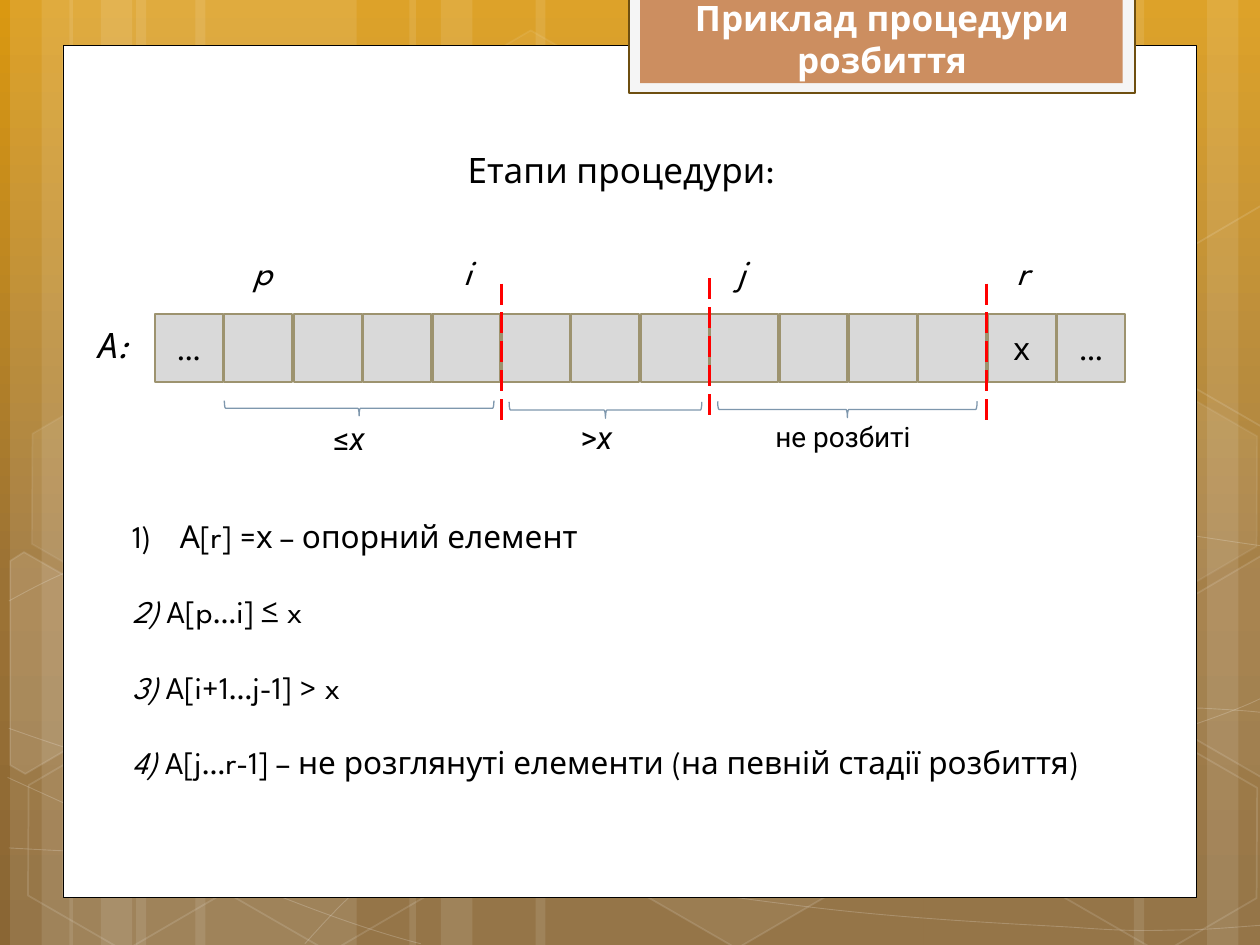
"""Build the slide that shows the stages of the array partition procedure."""
import math
from dataclasses import dataclass
from typing import Optional

from lxml import etree
from pptx import Presentation
from pptx import util as u
from pptx.dml.color import RGBColor
from pptx.enum import dml, shapes, text
from pptx.oxml import ns

WHITE = RGBColor(0xFF, 0xFF, 0xFF)
BLACK = RGBColor(0, 0, 0)
RED = RGBColor(0xFF, 0, 0)
CELL_FILL = RGBColor(0xD9, 0xD9, 0xD9)
CELL_LINE = RGBColor(0x9D, 0x93, 0x6F)
BRACE = RGBColor(0x7E, 0x97, 0xAD)
TAB_FILL = RGBColor(0xF5, 0xF5, 0xF5)
TAB_LINE = RGBColor(0x6E, 0x4F, 0x10)
TITLE_FILL = RGBColor(0xCC, 0x8E, 0x60)
GRADIENT = ((0, "DA9811"), (62, "9B7235"), (100, "8A6634"))
HEAD_FONT, NOTE_FONT = "League Spartan", "Roboto"
SHAPE, ALIGN = shapes.MSO_SHAPE, text.PP_ALIGN
TILT = 30


@dataclass
class Paint:
    color: RGBColor
    alpha: int = 100
    width: float = 0.5


@dataclass
class Run:
    text: str
    italic: bool = False


@dataclass
class Label:
    box: tuple
    paragraphs: list
    size: int = 20
    font: str = HEAD_FONT
    color: RGBColor = BLACK
    align: Optional[text.PP_ALIGN] = None
    bold: bool = False
    wrap: bool = True
    gap: float = 0


@dataclass
class Hexagon:
    x: float
    y: float
    fill: int
    line: int


@dataclass
class CutHexagon:
    center: tuple
    points: list
    fill: int


BANDS = [(1.08, 1.75), (0.08, 0.5), (0.33, 0.83), (1.55, 1.75), (0.55, 0.5), (0.8, 0.83),
         (7.33, 1.75), (9.58, 0.5), (9, 0.83), (4.25, 3.08), (3.25, 0.5), (3.5, 0.83)]
CURVES = [
    [(0.07, 6.73), (0.61, 6.76), (1.15, 6.79), (1.9, 6.78), (2.65, 6.77), (3.58, 6.75), (4.58, 6.65),
     (5.58, 6.55), (7, 6.36), (7.92, 6.17), (8.83, 5.98), (9.77, 5.68), (10.07, 5.51)],
    [(0.07, 4.77), (0.36, 4.61), (0.65, 4.46), (1.21, 4.31), (1.78, 4.16), (2.59, 3.94), (3.47, 3.87),
     (4.36, 3.8), (5.44, 3.79), (6.54, 3.87), (7.64, 3.95), (9.47, 4.26), (10.07, 4.34)],
    [(0.06, 6.17), (1.27, 6.72), (2.47, 7.27), (3.34, 7.49)],
    [(0.07, 5.78), (0.38, 5.89), (0.7, 6), (1.28, 6.16), (1.86, 6.31), (2.73, 6.56), (3.57, 6.73),
     (4.4, 6.9), (5.45, 7.08), (6.28, 7.18), (7.11, 7.29), (8, 7.33), (8.53, 7.36),
     (9.05, 7.4), (9.19, 7.38), (9.45, 7.38), (9.71, 7.37), (9.89, 7.35), (10.07, 7.34)],
    [(2.42, 7.49), (2.6, 7.29), (2.78, 7.09), (3.02, 6.91), (3.26, 6.73), (3.6, 6.53), (3.88, 6.39),
     (4.16, 6.25), (4.33, 6.19), (4.7, 6.09), (5.06, 5.99), (5.73, 5.85), (6.08, 5.78),
     (6.44, 5.71), (6.49, 5.71), (6.8, 5.69), (7.11, 5.66), (7.6, 5.63), (7.94, 5.62),
     (8.29, 5.61), (8.86, 5.62), (8.86, 5.62), (9.08, 5.62), (9.31, 5.62), (9.53, 5.62),
     (9.71, 5.63), (9.88, 5.64), (9.97, 5.65), (10.06, 5.66), (10.03, 5.65), (10.06, 5.66)],
]
HEXAGONS = [Hexagon(3.34, 0.36, 4, 8), Hexagon(4.97, 5.89, 6, 12), Hexagon(0.11, 5.91, 0, 12),
            Hexagon(0.14, 3.12, 7, 8), Hexagon(1.74, 5.92, 0, 12), Hexagon(7.53, 4.53, 10, 12),
            Hexagon(8.34, 5.93, 0, 12), Hexagon(8.34, 3.14, 7, 8)]
CUT_HEXAGONS = [
    CutHexagon((0.36, 5.35), [(0.08, 4.45), (0.19, 4.38), (0.96, 4.82), (0.95, 5.7),
                              (0.2, 6.14), (0.08, 6.07)], 10),
    CutHexagon((9.85, 5.2), [(9.26, 4.85), (10.01, 4.41), (10.09, 4.46), (10.09, 6.13),
                             (10.02, 6.17), (9.26, 5.73)], 4),
    CutHexagon((9.85, 2.41), [(9.26, 2.07), (10.01, 1.63), (10.1, 1.68), (10.09, 3.35),
                              (10.02, 3.39), (9.26, 2.95)], 0),
]
CELLS = ["…"] + [""] * 11 + ["х", "…"]
PITCH = 7.16 / 13
MARKERS = [(7.83, 2.25), (5.63, 2.21), (3.98, 2.25)]
BRACES = [(2.79, 2.17, 0.12, 2.14), (4.74, 2.49, 0.13, 1.53), (6.66, 2.22, 0.13, 2.06)]
INDEXES = [("p", 1.91), ("i", 3.58), ("j", 5.75), ("r", 7.97)]
STAGES = [
    [Run("А[r] =х – опорний елемент")],
    [Run("2) ", True), Run("A[p…i] ≤ x")],
    [Run("3) ", True), Run("A[i+1…j-1] > x")],
    [Run("4) ", True), Run("A[j…r-1] – не розглянуті елементи (на певній стадії розбиття)")],
]
LABELS = [
    Label((5.41, -0.08, 3.18, 0.77), [[Run("Приклад процедури ")], [Run("розбиття")]],
          color=WHITE, align=ALIGN.CENTER, bold=True, wrap=False),
    Label((3.4, 1.13, 3.06, 0.44), [[Run("Етапи процедури:")]], align=ALIGN.CENTER),
    Label((0.68, 2.52, 0.55, 0.44), [[Run("А:", True)]], align=ALIGN.JUSTIFY),
    *[Label((x, 1.94, 0.28, 0.44), [[Run(name, True)]], align=ALIGN.JUSTIFY) for name, x in INDEXES],
    Label((2.55, 3.28, 0.6, 0.4), [[Run("≤"), Run("х", True)]], 18, NOTE_FONT),
    Label((4.51, 3.27, 0.6, 0.4), [[Run(">"), Run("х", True)]], 18, NOTE_FONT),
    Label((6.02, 3.28, 1.34, 0.37), [[Run("не розбиті")]], 16, NOTE_FONT, align=ALIGN.CENTER),
]


def inches(values) -> list:
    return [u.Inches(v) for v in values]


def set_alpha(sp, query: str, alpha: int) -> None:
    if alpha < 100:
        for clr in sp._element.spPr.xpath(query):
            etree.SubElement(clr, ns.qn("a:alpha"), val=str(alpha * 1000))


def style(sp, fill: Optional[Paint] = None, line: Optional[Paint] = None):
    sp.shadow.inherit = False
    if fill and fill.alpha:
        sp.fill.solid()
        sp.fill.fore_color.rgb = fill.color
        set_alpha(sp, "./a:solidFill/a:srgbClr", fill.alpha)
    else:
        sp.fill.background()
    if line:
        sp.line.color.rgb = line.color
        sp.line.width = u.Pt(line.width)
        set_alpha(sp, "./a:ln/a:solidFill/a:srgbClr", line.alpha)
    else:
        sp.line.fill.background()
    return sp


def add_preset(s, kind, box, fill=None, line=None, rotation: float = 0):
    sp = s.shapes.add_shape(kind, *inches(box))
    sp.rotation = rotation
    return style(sp, fill, line)


def add_outline(s, points: list, close: bool, fill, line):
    pts = [inches(pt) for pt in points]
    builder = s.shapes.build_freeform(*pts[0], scale=1.0)
    builder.add_line_segments(pts[1:], close=close)
    return style(builder.convert_to_shape(), fill, line)


def add_curve(s, knots: list) -> None:
    sp = add_outline(s, knots, False, None, Paint(WHITE, 20))
    outline = sp._element.spPr.xpath(".//a:pathLst/*")[0]
    segments = outline.findall(ns.qn("a:lnTo"))
    for k in range(0, len(segments), 3):
        bezier = etree.SubElement(outline, ns.qn("a:cubicBezTo"))
        for segment in segments[k:k + 3]:
            bezier.append(segment[0])
            outline.remove(segment)


def add_cut_hexagon(s, h: CutHexagon) -> None:
    cx, cy = h.center
    cos, sin = math.cos(math.radians(TILT)), math.sin(math.radians(TILT))
    upright = [(cx + (x - cx) * cos + (y - cy) * sin, cy - (x - cx) * sin + (y - cy) * cos)
               for x, y in h.points]
    sp = add_outline(s, upright, True, Paint(WHITE, h.fill), Paint(WHITE, 12, 1))
    sp.rotation = TILT


def write(tf, label: Label) -> None:
    for n, runs in enumerate(label.paragraphs):
        p = tf.add_paragraph() if n else tf.paragraphs[0]
        p.alignment = label.align
        p.space_before = u.Pt(label.gap if n else 0)
        for run in runs:
            r = p.add_run()
            r.text = run.text
            r.font.size, r.font.name = u.Pt(label.size), label.font
            r.font.bold, r.font.italic = label.bold, run.italic
            r.font.color.rgb = label.color


def add_label(s, label: Label):
    tf = s.shapes.add_textbox(*inches(label.box)).text_frame
    tf.word_wrap = label.wrap
    tf.auto_size = text.MSO_AUTO_SIZE.SHAPE_TO_FIT_TEXT
    write(tf, label)
    return tf


def number(p) -> None:
    pPr = p._p.get_or_add_pPr()
    pPr.set("marL", str(u.Inches(0.38)))
    pPr.set("indent", str(-u.Inches(0.38)))
    etree.SubElement(pPr, ns.qn("a:buAutoNum"), type="arabicParenR")


def add_marker(s, x: float, y: float) -> None:
    line = s.shapes.add_connector(shapes.MSO_CONNECTOR.STRAIGHT, *inches((x, y, x, y + 1.11)))
    line.line.color.rgb = RED
    line.line.width = u.Pt(1.5)
    line.line.dash_style = dml.MSO_LINE.LONG_DASH
    etree.SubElement(line._element.spPr, ns.qn("a:effectLst"))


def add_backdrop(s) -> None:
    fill = s.background.fill
    fill.gradient()
    fill.gradient_angle = 270
    stops = s._element.xpath(".//p:bg//a:gsLst")[0]
    for gs in list(stops):
        stops.remove(gs)
    for pos, color in GRADIENT:
        gs = etree.SubElement(stops, ns.qn("a:gs"), pos=str(pos * 1000))
        etree.SubElement(gs, ns.qn("a:srgbClr"), val=color)
    for x, width in BANDS:
        add_preset(s, SHAPE.RECTANGLE, (x, 0, width, 7.5), Paint(WHITE, 10))
    for knots in CURVES:
        add_curve(s, knots)
    for h in HEXAGONS:
        sp = add_preset(s, SHAPE.HEXAGON, (h.x, h.y, 1.75, 1.52), Paint(WHITE, h.fill),
                        Paint(WHITE, h.line, 1), TILT)
        sp.adjustments[0] = 0.285
    for h in CUT_HEXAGONS:
        add_cut_hexagon(s, h)
    add_preset(s, SHAPE.RECTANGLE, (0.5, 0.36, 9, 6.76), Paint(WHITE), Paint(BLACK))
    add_preset(s, SHAPE.RECTANGLE, (4.99, -0.02, 4.02, 0.76), Paint(TAB_FILL), Paint(TAB_LINE, width=1.25))
    add_preset(s, SHAPE.RECTANGLE, (5.08, -0.02, 3.83, 0.68), Paint(TITLE_FILL))


def add_array(s) -> None:
    for n, value in enumerate(CELLS):
        box = (1.23 + n * PITCH, 2.49, 0.54, 0.54)
        sp = add_preset(s, SHAPE.RECTANGLE, box, Paint(CELL_FILL), Paint(CELL_LINE, width=1.25))
        if value:
            sp.text_frame.vertical_anchor = text.MSO_ANCHOR.MIDDLE
            write(sp.text_frame, Label(box, [[Run(value)]], 18, align=ALIGN.CENTER))
    for x, y in MARKERS:
        add_marker(s, x, y)
    for box in BRACES:
        add_preset(s, SHAPE.RIGHT_BRACE, box, None, Paint(BRACE, width=0.75), 90)


def main() -> None:
    prs = Presentation()
    prs.slide_width, prs.slide_height = inches((10, 7.5))
    s = prs.slides.add_slide(prs.slide_layouts[6])
    add_backdrop(s)
    add_array(s)
    for label in LABELS:
        add_label(s, label)
    tf = add_label(s, Label((0.95, 4.05, 8.3, 2.22), STAGES, 18, gap=21.6))
    number(tf.paragraphs[0])
    prs.save("out.pptx")


if __name__ == "__main__":
    main()
